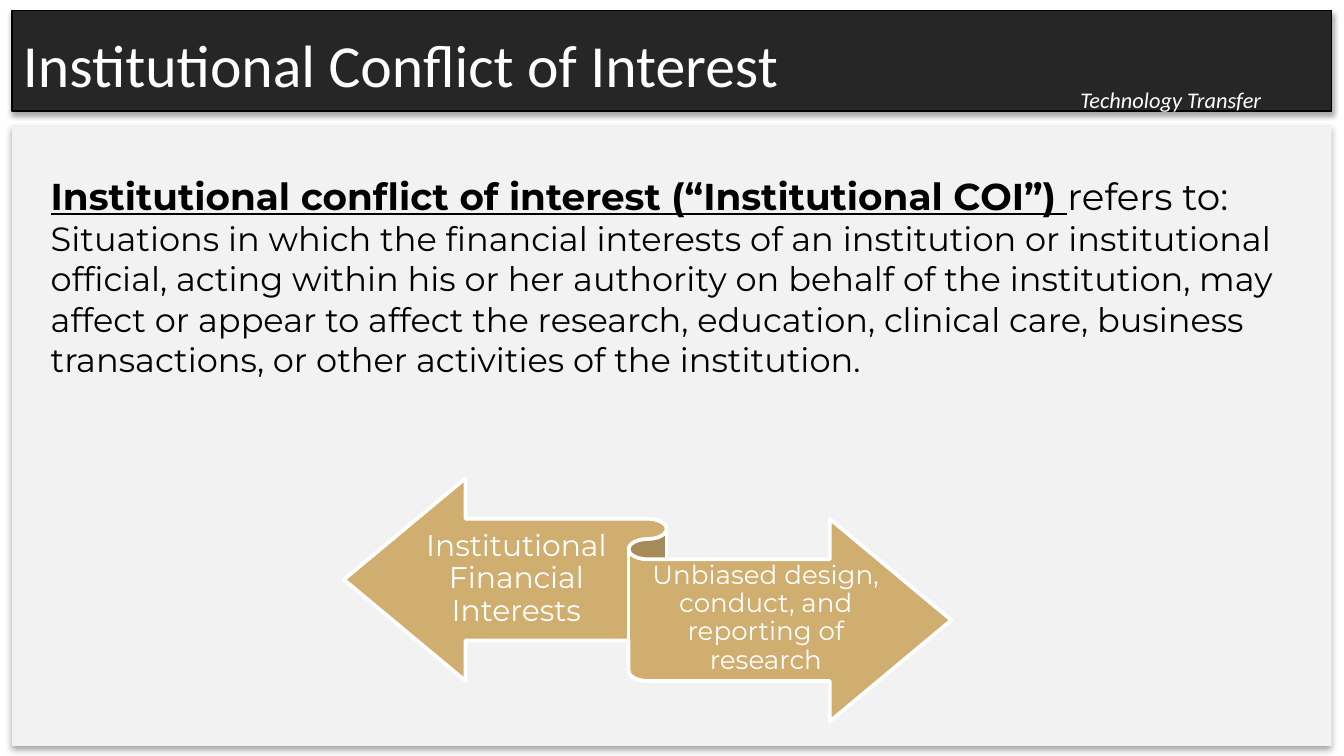
from lxml import etree
from pptx import Presentation
from pptx.dml.color import RGBColor
from pptx.enum.shapes import MSO_SHAPE
from pptx.enum.text import MSO_ANCHOR, MSO_AUTO_SIZE, PP_ALIGN
from pptx.oxml.ns import qn
from pptx.util import Cm, Pt

RECT, RIBBON = MSO_SHAPE.RECTANGLE, MSO_SHAPE.LEFT_RIGHT_RIBBON
LEFT, CENTER = PP_ALIGN.LEFT, PP_ALIGN.CENTER
MIDDLE = MSO_ANCHOR.MIDDLE
NO_FIT = MSO_AUTO_SIZE.NONE

WHITE = RGBColor(0xFF, 0xFF, 0xFF)
BLACK = RGBColor(0x00, 0x00, 0x00)
PALE_GREY = RGBColor(0xF2, 0xF2, 0xF2)
CHARCOAL = RGBColor(0x26, 0x26, 0x26)
GOLD = RGBColor(0xCF, 0xAE, 0x70)


def add_soft_shadow(sp):
    sp.shadow.inherit = False
    effects = sp._element.spPr.find(qn("a:effectLst"))
    shadow = etree.SubElement(effects, qn("a:outerShdw"), blurRad="40000",
                              dist="23000", dir="5400000", rotWithShape="0")
    color = etree.SubElement(shadow, qn("a:srgbClr"), val="000000")
    etree.SubElement(color, qn("a:alpha"), val="35000")


def format_run(r, name, size, color):
    r.font.name = name
    r.font.size = Pt(size)
    r.font.color.rgb = color


prs = Presentation()
prs.slide_width, prs.slide_height = Cm(25.4), Cm(14.29)
s = prs.slides.add_slide(prs.slide_layouts[5])

# Content panel and header bar
for top, height, fill in ((2.39, 11.71, PALE_GREY), (0.2, 1.9, CHARCOAL)):
    sp = s.shapes.add_shape(RECT, Cm(0.23), Cm(top), Cm(24.94), Cm(height))
    sp.fill.solid()
    sp.fill.fore_color.rgb = fill
    sp.line.fill.background()
    add_soft_shadow(sp)
header = sp
header.line.color.rgb = BLACK
header.line.width = Pt(0.75)

# Title, brought in front of the header bar
title = s.shapes.title
header._element.addnext(title._element)
title.left, title.top, title.width, title.height = Cm(0.18), Cm(0), Cm(16.43), Cm(2.39)
tf = title.text_frame
tf.text = "Institutional Conflict of Interest"
tf.auto_size = NO_FIT
tf.vertical_anchor = MIDDLE
p = tf.paragraphs[0]
p.alignment = LEFT
format_run(p.runs[0], "Calibri", 32, WHITE)

# Section name
section = s.shapes.add_textbox(Cm(20.17), Cm(1.5), Cm(4.22), Cm(0.79))
tf = section.text_frame
tf.word_wrap = True
tf.text = "Technology Transfer"
r = tf.paragraphs[0].runs[0]
format_run(r, "Calibri", 12, WHITE)
r.font.italic = True

# Definition
definition = s.shapes.add_textbox(Cm(0.71), Cm(3.15), Cm(24.23), Cm(4.19))
tf = definition.text_frame
tf.word_wrap = True
p = tf.paragraphs[0]
r = p.add_run()
r.text = "Institutional conflict of interest (“Institutional COI”) "
format_run(r, "Montserrat", 20, BLACK)
r.font.bold = True
r.font.underline = True
r = p.add_run()
r.text = "refers to:"
format_run(r, "Montserrat", 20, BLACK)
p = tf.add_paragraph()
p.text = (
    "Situations in which the financial interests of an institution or "
    "institutional official, acting within his or her authority on behalf of "
    "the institution, may affect or appear to affect the research, education, "
    "clinical care, business transactions, or other activities of the institution."
)
format_run(p.runs[0], "Montserrat", 18, BLACK)

# Ribbon with opposing interests
ribbon = s.shapes.add_shape(RIBBON, Cm(6.5), Cm(9.04), Cm(11.48), Cm(4.6))
ribbon.shadow.inherit = False
ribbon.fill.solid()
ribbon.fill.fore_color.rgb = GOLD
ribbon.line.color.rgb = WHITE
ribbon.line.width = Pt(2)

for left, top, width, size, text in (
    (7.87, 9.83, 3.78, 16, "Institutional Financial Interests"),
    (12.24, 10.57, 4.47, 14, "Unbiased design, conduct, and reporting of research"),
):
    label = s.shapes.add_textbox(Cm(left), Cm(top), Cm(width), Cm(2.26))
    tf = label.text_frame
    tf.word_wrap = True
    tf.vertical_anchor = MIDDLE
    tf.margin_left = tf.margin_right = 0
    tf.margin_top, tf.margin_bottom = Cm(0.14), Cm(0.16)
    tf.text = text
    p = tf.paragraphs[0]
    p.alignment = CENTER
    p.line_spacing = 0.9
    format_run(p.runs[0], "Montserrat", size, WHITE)

prs.save("out.pptx")
